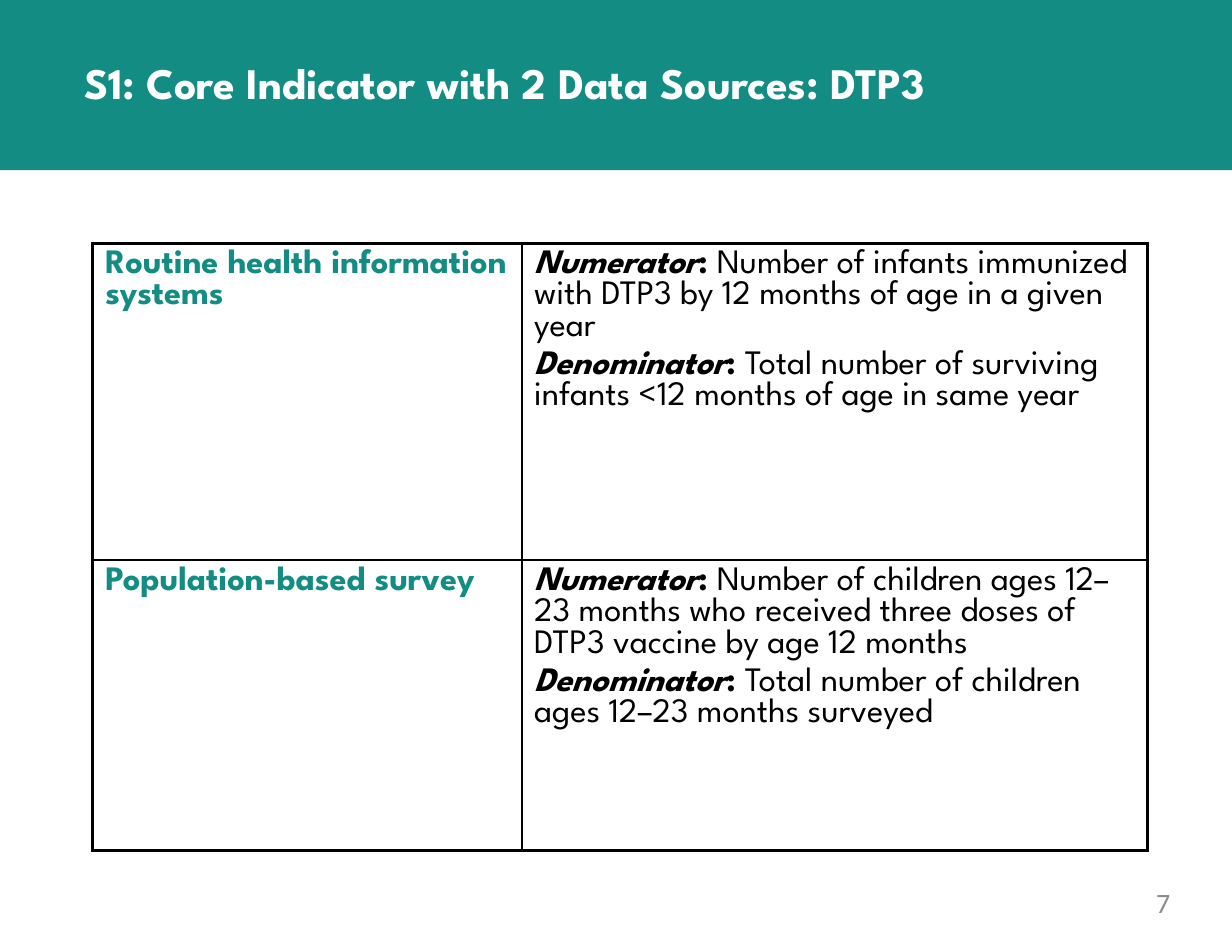
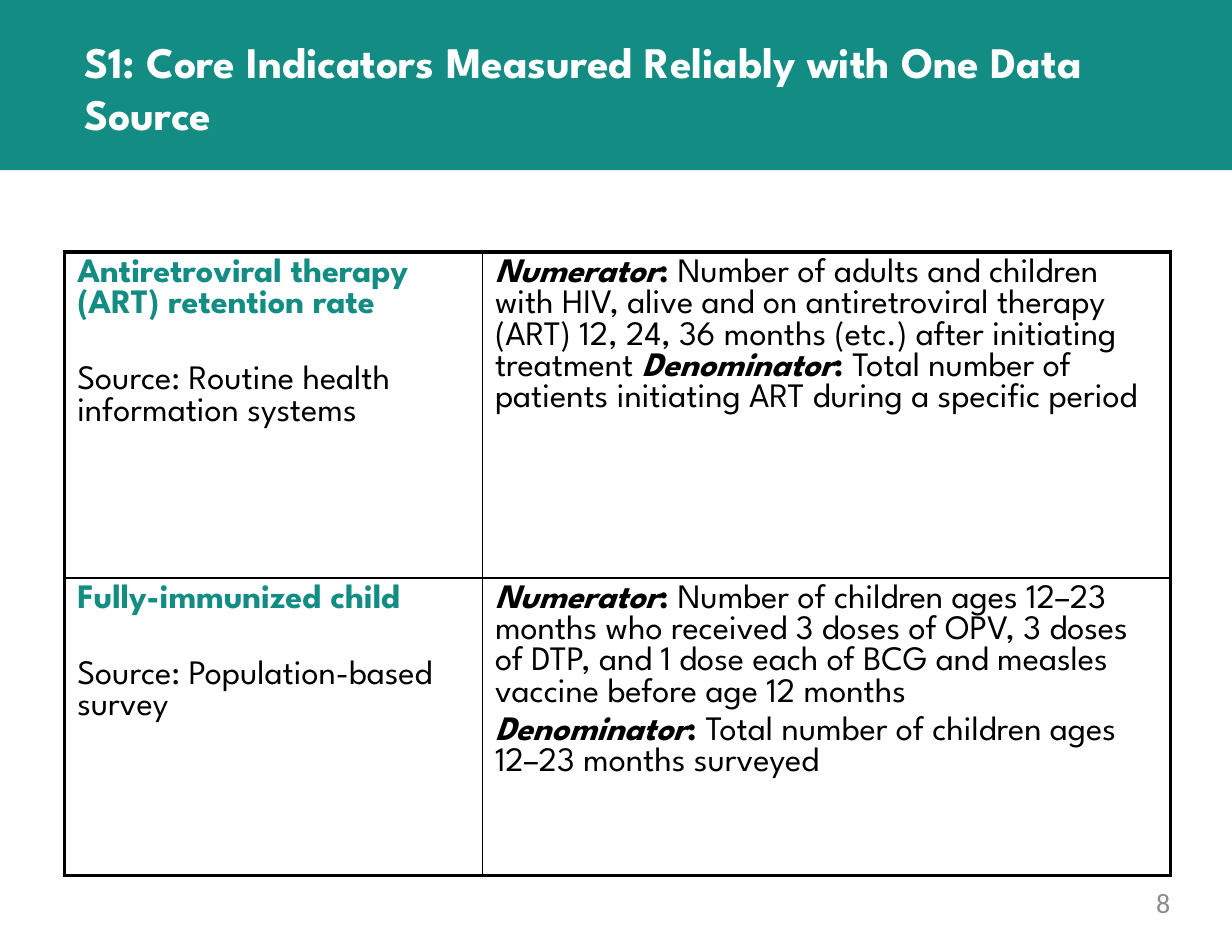
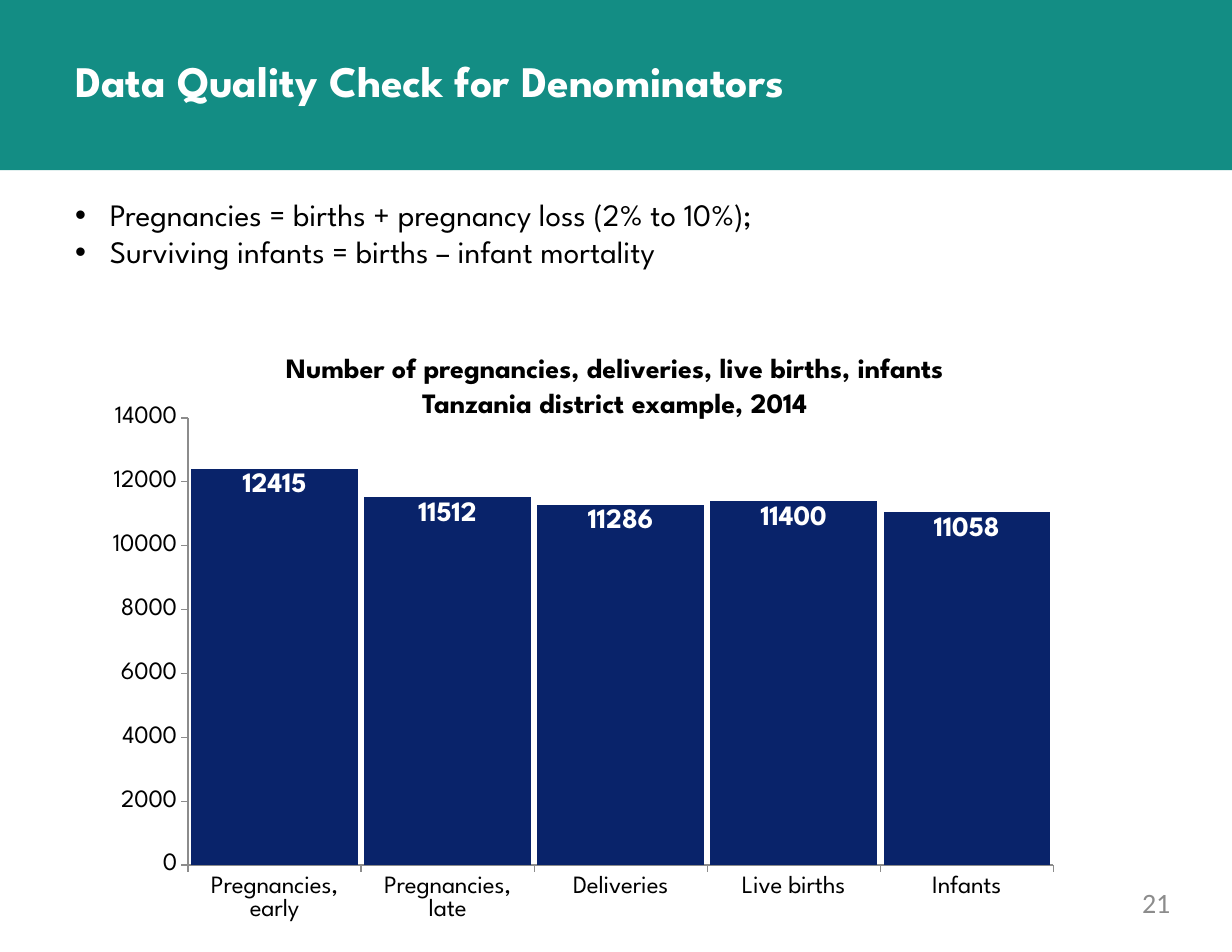
from lxml import etree
from pptx import Presentation
from pptx.chart.data import CategoryChartData
from pptx.dml.color import RGBColor
from pptx.enum.chart import XL_CHART_TYPE, XL_LABEL_POSITION, XL_TICK_MARK
from pptx.enum.shapes import MSO_SHAPE
from pptx.enum.text import MSO_ANCHOR, MSO_AUTO_SIZE, PP_ALIGN
from pptx.oxml import parse_xml
from pptx.oxml.ns import nsdecls, qn
from pptx.util import Inches, Pt

COLUMNS = XL_CHART_TYPE.COLUMN_CLUSTERED
INSIDE_END = XL_LABEL_POSITION.INSIDE_END
TICK_OUT = XL_TICK_MARK.OUTSIDE
RECTANGLE = MSO_SHAPE.RECTANGLE
TOP = MSO_ANCHOR.TOP
GROW = MSO_AUTO_SIZE.SHAPE_TO_FIT_TEXT
LEFT, CENTER, RIGHT = PP_ALIGN.LEFT, PP_ALIGN.CENTER, PP_ALIGN.RIGHT

TEAL, NAVY, GREY = "138D84", "09236A", "8C8C8C"
BLACK, WHITE = "000000", "FFFFFF"
HEAD, PLAIN = "League Spartan", "Calibri"
TITLE_ONLY, TITLE_BODY = 5, 1
THICK, THIN = 2.25, 1


def color(hex_text):
    """Return the colour for a hex string."""
    return RGBColor.from_string(hex_text)


def format_font(font, size, name=HEAD, fill=BLACK, bold=False, italic=False):
    """Set the face, size, colour and weight of a font."""
    font.name, font.size, font.bold, font.italic = name, Pt(size), bold, italic
    font.color.rgb = color(fill)


def add_text(p, text, size, **style):
    """Add formatted text to a paragraph, breaking the line at each newline."""
    for i, line in enumerate(text.split("\n")):
        if i:
            p.add_line_break()
        r = p.add_run()
        r.text = line
        format_font(r.font, size, **style)


def set_paragraph(p, align=LEFT, spacing=None, before=0):
    """Set the alignment and spacing of a paragraph."""
    p.alignment = align
    p.space_before = Pt(before)
    if spacing:
        p.line_spacing = Pt(spacing)


def next_paragraph(tf, i):
    """Return the first paragraph of a frame, or a new one after it."""
    return tf.add_paragraph() if i else tf.paragraphs[0]


def place(sp, box, inset=0):
    """Place a text shape in a box, with even insets and top anchoring."""
    sp.left, sp.top, sp.width, sp.height = map(Inches, box)
    tf = sp.text_frame
    tf.word_wrap, tf.auto_size, tf.vertical_anchor = True, GROW, TOP
    tf.margin_left = tf.margin_right = Inches(2 * inset)
    tf.margin_top = tf.margin_bottom = Inches(inset)
    return tf


def add_label(s, box, text, size, align, spacing=None, inset=0, **style):
    """Add a text box with one paragraph."""
    tf = place(s.shapes.add_textbox(*map(Inches, box)), box, inset)
    set_paragraph(tf.paragraphs[0], align, spacing)
    add_text(tf.paragraphs[0], text, size, **style)


def add_band(prs, s):
    """Draw the title band and move it to the back of the slide master."""
    band = s.shapes.add_shape(RECTANGLE, 0, 0, prs.slide_width, Inches(1.52))
    band.shadow.inherit = False
    band.fill.solid()
    band.fill.fore_color.rgb = color(TEAL)
    band.line.fill.background()
    prs.slide_master.shapes.element.insert(2, band.element)


def add_slide(prs, layout, title, box, number):
    """Add a slide with its title and page number."""
    s = prs.slides.add_slide(prs.slide_layouts[layout])
    p = place(s.shapes.title, box).paragraphs[0]
    set_paragraph(p, spacing=33.5)
    add_text(p, title, 28, fill=WHITE, bold=True)
    add_label(s, (7.92, 7.91, 2.53, 0.42), number, 18, RIGHT, name=PLAIN, fill=GREY)
    return s


def set_borders(cell, **widths):
    """Draw black cell borders of the given widths in points."""
    tcPr = cell._tc.get_or_add_tcPr()
    for side, width in widths.items():
        ln = etree.SubElement(tcPr, qn(f"a:ln{side}"), w=str(Pt(width)))
        fill = etree.SubElement(ln, qn("a:solidFill"))
        etree.SubElement(fill, qn("a:srgbClr"), val=BLACK)


def fill_cell(cell, paragraphs):
    """Write paragraphs, each a space before and a list of styled runs."""
    cell.margin_left = cell.margin_right = Inches(0.11)
    cell.margin_top = cell.margin_bottom = Inches(0.06)
    cell.fill.background()
    for i, (before, runs) in enumerate(paragraphs):
        p = next_paragraph(cell.text_frame, i)
        set_paragraph(p, spacing=20.1, before=before)
        for text, style in runs:
            add_text(p, text, 22, **style)


def term(name, definition):
    """Return the runs of a term and its definition."""
    return [(name, {"bold": True, "italic": True}), (": ", {"bold": True}), (definition, {})]


def topic(name, source=None):
    """Return the paragraphs of a left cell."""
    heading = (4.4, [(name, {"fill": TEAL, "bold": True})])
    return [heading] + ([(28.8, [(source, {})])] if source else [])


def ratio(numerator, denominator, joined=False):
    """Return the paragraphs of a right cell, in one paragraph if joined."""
    top, bottom = term("Numerator", numerator), term("Denominator", denominator)
    return [(4.4, top + bottom)] if joined else [(4.4, top), (4.4, bottom)]


def add_indicator_table(s, box, widths, heights, rows):
    """Add a table with thick outer and thin inner borders."""
    frame = s.shapes.add_table(len(rows), len(widths), *map(Inches, box))
    table = frame.table
    table.first_row = table.horz_banding = False
    for col, width in zip(table.columns, widths):
        col.width = Inches(width)
    for row, height in zip(table.rows, heights):
        row.height = Inches(height)
    for i, row in enumerate(rows):
        for j, paragraphs in enumerate(row):
            cell = table.cell(i, j)
            set_borders(
                cell,
                L=THIN if j else THICK,
                R=THICK if j == len(widths) - 1 else THIN,
                T=THIN if i else THICK,
                B=THICK if i == len(rows) - 1 else THIN,
            )
            fill_cell(cell, paragraphs)


def fill_bullets(sp, box, items):
    """Write a bulleted list into the body placeholder."""
    tf = place(sp, box)
    for i, item in enumerate(items):
        p = next_paragraph(tf, i)
        set_paragraph(p, spacing=23.8)
        pPr = p._p.get_or_add_pPr()
        pPr.set("marL", str(Inches(0.31)))
        pPr.set("indent", str(-Inches(0.31)))
        etree.SubElement(pPr, qn("a:buChar"), char="•")
        add_text(p, item, 20)


def set_plot_area(chart, **share):
    """Fix the inner plot area as shares of the chart."""
    area = chart._chartSpace.chart.plotArea
    for old in area.findall(qn("c:layout")):
        area.remove(old)
    sizes = "".join(f'<c:{key} val="{val}"/>' for key, val in share.items())
    area.insert(0, parse_xml(
        f'<c:layout {nsdecls("c")}><c:manualLayout><c:layoutTarget val="inner"/>'
        f'<c:xMode val="edge"/><c:yMode val="edge"/>{sizes}</c:manualLayout></c:layout>'))


def add_column_chart(s, box, values):
    """Add a column chart with value labels inside the columns."""
    data = CategoryChartData()
    data.categories = list(values)
    data.add_series("Series 1", list(values.values()))
    chart = s.shapes.add_chart(COLUMNS, *map(Inches, box), data).chart
    chart.has_legend = chart.has_title = False
    format_font(chart.font, 18, name=PLAIN)
    for axis in (chart.category_axis, chart.value_axis):
        axis.has_major_gridlines = False
        axis.major_tick_mark = TICK_OUT
        axis.format.line.color.rgb = color(GREY)
        axis.format.line.width = Pt(0.75)
        format_font(axis.tick_labels.font, 16)
    chart.value_axis.minimum_scale = 0
    plot = chart.plots[0]
    plot.gap_width, plot.vary_by_categories = 4, False
    fill = plot.series[0].format.fill
    fill.solid()
    fill.fore_color.rgb = color(NAVY)
    labels = plot.series[0].data_labels
    labels.show_value, labels.position = True, INSIDE_END
    format_font(labels.font, 18, fill=WHITE, bold=True)
    set_plot_area(chart, x=0.097, y=0.04, w=0.883, h=0.83)


def build_two_sources(prs):
    """Build the slide on an indicator with two data sources."""
    s = add_slide(prs, TITLE_ONLY, "S1: Core Indicator with 2 Data Sources: DTP3",
                  (0.75, 0.5, 10, 0.47), "7")
    add_band(prs, s)
    add_indicator_table(s, (0.83, 2.17, 9.42, 5.42), (3.83, 5.59), (2.83, 2.59), [
        (topic("Routine health information systems"),
         ratio("Number of infants immunized with DTP3 by 12 months of age in a given year",
               "Total number of surviving infants <12 months of age in same year")),
        (topic("Population-based survey"),
         ratio("Number of children ages 12–23 months who received three doses of "
               "DTP3 vaccine by age 12 months",
               "Total number of children ages 12–23 months surveyed")),
    ])


def build_one_source(prs):
    """Build the slide on indicators with one data source."""
    s = add_slide(prs, TITLE_ONLY, "S1: Core Indicators Measured Reliably with One Data Source",
                  (0.75, 0.31, 9.08, 0.94), "8")
    add_indicator_table(s, (0.58, 2.25, 9.87, 5.57), (3.73, 6.14), (2.91, 2.66), [
        (topic("Antiretroviral therapy (ART) retention rate",
               "Source: Routine health information systems"),
         ratio("Number of adults and children with HIV, alive and on antiretroviral "
               "therapy (ART) 12, 24, 36 months (etc.) after initiating treatment ",
               "Total number of patients initiating ART during a specific period",
               joined=True)),
        (topic("Fully-immunized child", "Source: Population-based survey"),
         ratio("Number of children ages 12–23 months who received 3 doses of OPV, "
               "3 doses of DTP, and 1 dose each of BCG and measles vaccine before "
               "age 12 months",
               "Total number of children ages 12–23 months surveyed")),
    ])


def build_denominators(prs):
    """Build the slide that checks denominators with a chart."""
    s = add_slide(prs, TITLE_BODY, "Data Quality Check for Denominators",
                  (0.67, 0.48, 10, 0.47), "21")
    fill_bullets(s.placeholders[1], (0.67, 1.75, 9.08, 1), [
        "Pregnancies = births + pregnancy loss (2% to 10%);",
        "Surviving infants = births – infant mortality",
    ])
    add_column_chart(s, (0.83, 3.54, 8.75, 4.81), {
        "Pregnancies, early": 12415,
        "Pregnancies, late": 11512,
        "Deliveries": 11286,
        "Live births": 11400,
        "Infants": 11058,
    })
    add_label(s, (2.17, 3.08, 6.64, 0.71),
              "Number of pregnancies, deliveries, live births, infants\n"
              "Tanzania district example, 2014",
              18, CENTER, spacing=21.9, inset=0.05, bold=True)


def main():
    """Build and save the presentation."""
    prs = Presentation()
    prs.slide_width, prs.slide_height = Inches(11), Inches(8.5)
    build_two_sources(prs)
    build_one_source(prs)
    build_denominators(prs)
    prs.save("out.pptx")


if __name__ == "__main__":
    main()
